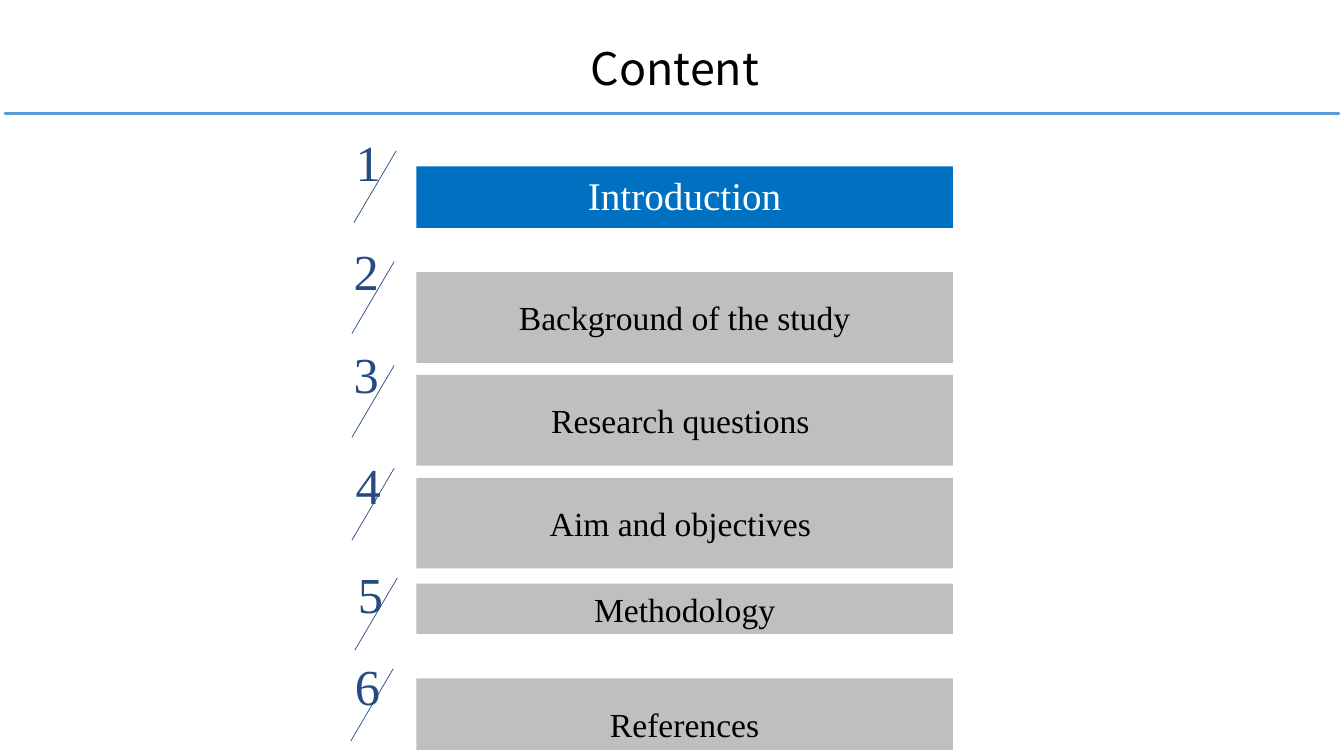
from pptx import Presentation
from pptx.dml.color import RGBColor as RGB
from pptx.enum.shapes import MSO_CONNECTOR as LINE, MSO_SHAPE as SHAPE
from pptx.enum.text import MSO_ANCHOR as ANCHOR, PP_ALIGN as ALIGN
from pptx.oxml.ns import qn
from pptx.util import Inches, Pt
from lxml.etree import SubElement

TITLE = "Content"
ITEMS = [
    ("Introduction", "active", 1.65, 0.61, 1, (3.43, 1.25), (3.51, 2.21)),
    ("Background of the study", "plain", 2.7, 0.9, 1.5, (3.41, 2.33), (3.49, 3.31)),
    ("Research questions ", "plain", 3.72, 0.9, 1.5, (3.41, 3.36), (3.49, 4.34)),
    ("Aim and objectives ", "plain", 4.74, 0.9, 1.5, (3.43, 4.46), (3.49, 5.36)),
    ("Methodology", "plain", 5.79, 0.5, 1, (3.45, 5.54), (3.52, 6.45)),
    ("References", "plain", 6.73, 0.71, 1.5, (3.42, 6.45), (3.48, 7.35)),
]
BAR_LEFT, BAR_WIDTH = 4.13, 5.32
NUMBER_SIZE = 0.58, 0.74
SLASH_RUN, SLASH_RISE = 0.42, 0.715

SERIF = "Times New Roman"
THEME = {
    "rule": "5B9BD5",
    "slash": "264B82",
    "title": {"font": "Noto Sans CJK SC", "size": 32, "color": "000000"},
    "number": {"font": SERIF, "size": 36, "color": "264B82"},
    "active": {"font": SERIF, "size": 28, "color": "FFFFFF", "fill": "0070C0"},
    "plain": {"font": SERIF, "size": 24, "color": "000000", "fill": "BFBFBF"},
}


def write(sp, text, style, anchor=ANCHOR.TOP, **paragraph):
    tf = sp.text_frame
    tf.word_wrap = True
    tf.vertical_anchor = anchor
    p = tf.paragraphs[0]
    for name, value in paragraph.items():
        setattr(p, name, value)
    r = p.add_run()
    r.text = text
    for name, value in {"name": style["font"], "size": Pt(style["size"])}.items():
        setattr(r.font, name, value)
    r.font.color.rgb = RGB.from_string(style["color"])
    SubElement(r.font._element, qn("a:ea")).set("typeface", style["font"])


def add_rect(s, box, color):
    sp = s.shapes.add_shape(SHAPE.RECTANGLE, *map(Inches, box))
    sp.shadow.inherit = False
    sp.fill.solid()
    sp.fill.fore_color.rgb = RGB.from_string(color)
    sp.line.fill.background()
    return sp


def add_slash(s, x, y):
    ends = x, y, x + SLASH_RUN, y - SLASH_RISE
    line = s.shapes.add_connector(LINE.STRAIGHT, *map(Inches, ends))
    line.line.width = Pt(0.5)
    line.line.color.rgb = RGB.from_string(THEME["slash"])
    SubElement(line._element.spPr, qn("a:effectLst"))


def main():
    prs = Presentation()
    prs.slide_width, prs.slide_height = Inches(13.33), Inches(7.5)
    s = prs.slides.add_slide(prs.slide_layouts[6])

    rule = add_rect(s, (0.05, 1.12, 13.23, 0.01), THEME["rule"])
    rule.line.color.rgb = RGB.from_string(THEME["rule"])
    rule.line.width = Pt(1)

    title = s.shapes.add_textbox(*map(Inches, (2.52, 0.28, 8.35, 0.85)))
    write(title, TITLE, THEME["title"], ANCHOR.MIDDLE, alignment=ALIGN.CENTER, line_spacing=0.9)

    for i, (label, kind, top, height, spacing, number_at, slash_at) in enumerate(ITEMS, 1):
        number = s.shapes.add_textbox(*map(Inches, number_at + NUMBER_SIZE))
        write(number, str(i), THEME["number"])
        add_slash(s, *slash_at)
        bar = add_rect(s, (BAR_LEFT, top, BAR_WIDTH, height), THEME[kind]["fill"])
        write(bar, label, THEME[kind], alignment=ALIGN.CENTER, line_spacing=spacing)

    prs.save("out.pptx")


if __name__ == "__main__":
    main()
